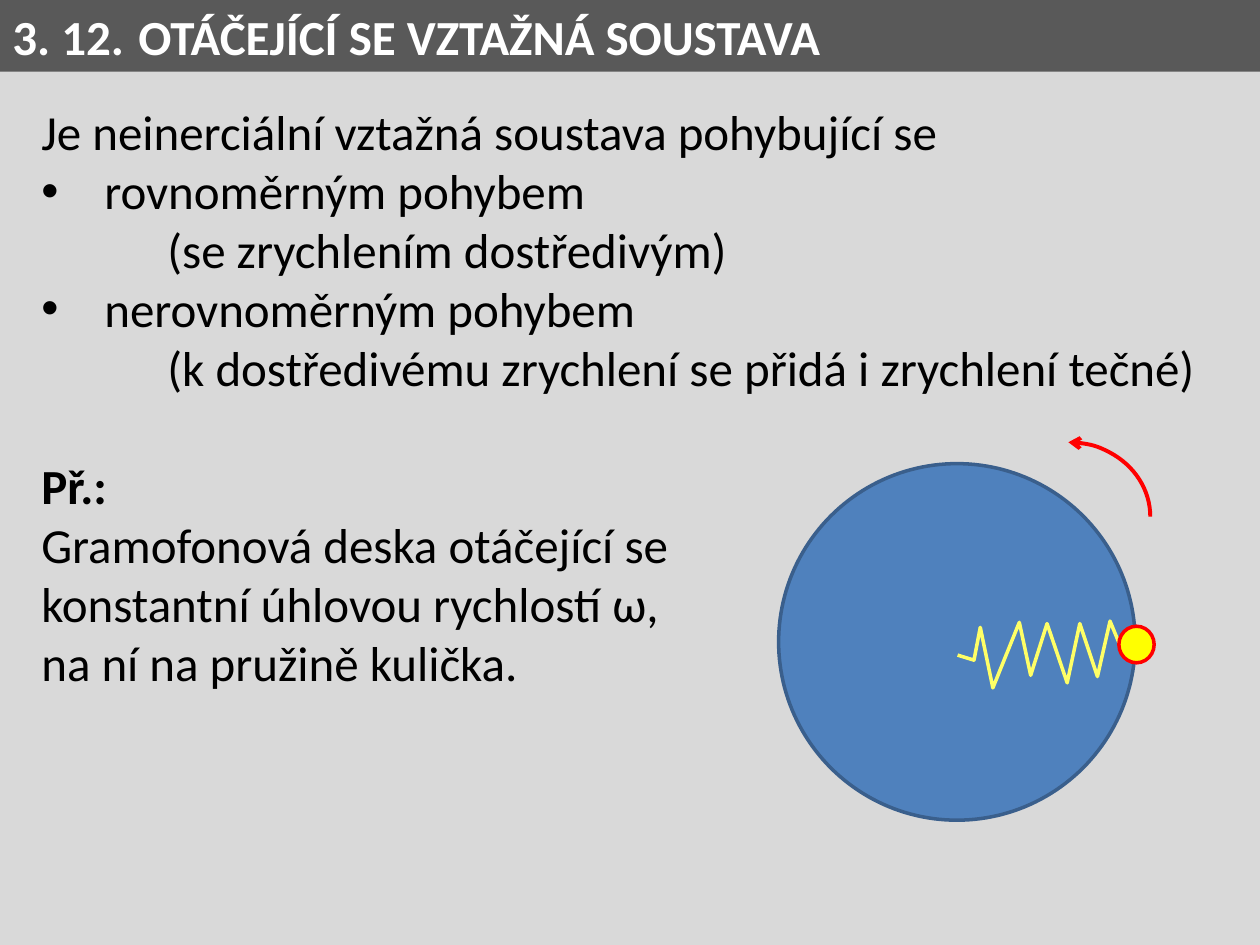
from lxml.etree import SubElement
from pptx import Presentation
from pptx.dml.color import RGBColor
from pptx.enum.shapes import MSO_SHAPE
from pptx.enum.text import MSO_ANCHOR, PP_ALIGN
from pptx.oxml.ns import qn
from pptx.util import Inches, Pt


def rgb(value):
    return RGBColor.from_string(value)


class SlideBuilder:
    font = {"name": "Calibri", "size": Pt(28)}

    def __init__(self, slide, background):
        self.s = slide
        fill = slide.background.fill
        fill.solid()
        fill.fore_color.rgb = rgb(background)

    def style(self, sp, fill=None, line=None, width=2):
        sp.shadow.inherit = False
        for part, color in ((sp.fill, fill), (sp.line.fill, line)):
            if color:
                part.solid()
                part.fore_color.rgb = rgb(color)
            else:
                part.background()
        if line:
            sp.line.width = Pt(width)
        return sp

    def shape(self, kind, box, **look):
        sp = self.s.shapes.add_shape(kind, *map(Inches, box))
        return self.style(sp, **look)

    def polyline(self, points, **look):
        start, *rest = [(Inches(x), Inches(y)) for x, y in points]
        fb = self.s.shapes.build_freeform(*start, scale=1.0)
        fb.add_line_segments(rest, close=False)
        return self.style(fb.convert_to_shape(), **look)

    def arc_arrow(self, box, **look):
        sp = self.shape(MSO_SHAPE.ARC, box, **look)
        SubElement(sp.line._get_or_add_ln(), qn("a:headEnd"), type="arrow")

    def run(self, p, text, color="000000", bold=False):
        r = p.add_run()
        r.text = text
        for name, value in {**self.font, "bold": bold}.items():
            setattr(r.font, name, value)
        r.font.color.rgb = rgb(color)

    def banner(self, text, box, fill, color):
        sp = self.shape(MSO_SHAPE.RECTANGLE, box, fill=fill)
        tf = sp.text_frame
        tf.vertical_anchor = MSO_ANCHOR.MIDDLE
        p = tf.paragraphs[0]
        p.alignment = PP_ALIGN.LEFT
        self.run(p, text, color, bold=True)

    def text(self, box, paragraphs):
        tf = self.s.shapes.add_textbox(*map(Inches, box)).text_frame
        tf.word_wrap = True
        for i, (lines, indent, bullet, before) in enumerate(paragraphs):
            p = tf.add_paragraph() if i else tf.paragraphs[0]
            p.space_before = Pt(before)
            pPr = p._p.get_or_add_pPr()
            pPr.set("marL", str(Inches(indent)))
            if bullet:
                pPr.set("indent", str(-Inches(indent)))
                SubElement(pPr, qn("a:buFont"), typeface="Arial")
                SubElement(pPr, qn("a:buChar"), char="•")
            for j, line in enumerate(lines):
                if j:
                    p.add_line_break()
                self.run(p, line, bold=line == EXAMPLE)


EXAMPLE = "Př.:"

# Lines, left indent, bullet, space before
BODY = [
    (["Je neinerciální vztažná soustava pohybující se"], 0, False, 0),
    (["rovnoměrným pohybem"], 0.5, True, 0),
    (["(se zrychlením dostředivým)"], 1, False, 0),
    (["nerovnoměrným pohybem"], 0.5, True, 0),
    (["(k dostředivému zrychlení se přidá i zrychlení tečné)"], 1, False, 0),
    ([EXAMPLE, "Gramofonová deska otáčející se",
      "konstantní úhlovou rychlostí ω,", "na ní na pružině kulička."], 0, False, 34),
]

SPRING = [(8.88, 5.1), (8.81, 4.93), (8.71, 5.37), (8.57, 4.95),
          (8.47, 5.42), (8.31, 4.95), (8.18, 5.36), (8.09, 4.94),
          (7.88, 5.46), (7.78, 4.98), (7.73, 5.24), (7.6, 5.2)]


def main():
    prs = Presentation()
    prs.slide_width, prs.slide_height = Inches(10), Inches(7.5)
    b = SlideBuilder(prs.slides.add_slide(prs.slide_layouts[6]), "D9D9D9")

    # Text and title bar
    b.text((0.23, 0.76, 9.53, 4.81), BODY)
    b.banner("3. 12.\tOTÁČEJÍCÍ SE VZTAŽNÁ SOUSTAVA", (0, 0, 10, 0.57),
             "595959", "FFFFFF")

    # Turning record with a ball on a spring
    b.shape(MSO_SHAPE.OVAL, (6.18, 3.68, 2.83, 2.83), fill="4F81BD", line="3A5F8C")
    b.polyline(SPRING, line="FFFF66")
    b.shape(MSO_SHAPE.OVAL, (8.88, 4.97, 0.28, 0.29), fill="FFFF00", line="FF0000")

    # Direction of rotation
    b.arc_arrow((7.83, 3.51, 1.3, 1.18), line="FF0000", width=2.25)

    prs.save("out.pptx")


if __name__ == "__main__":
    main()
